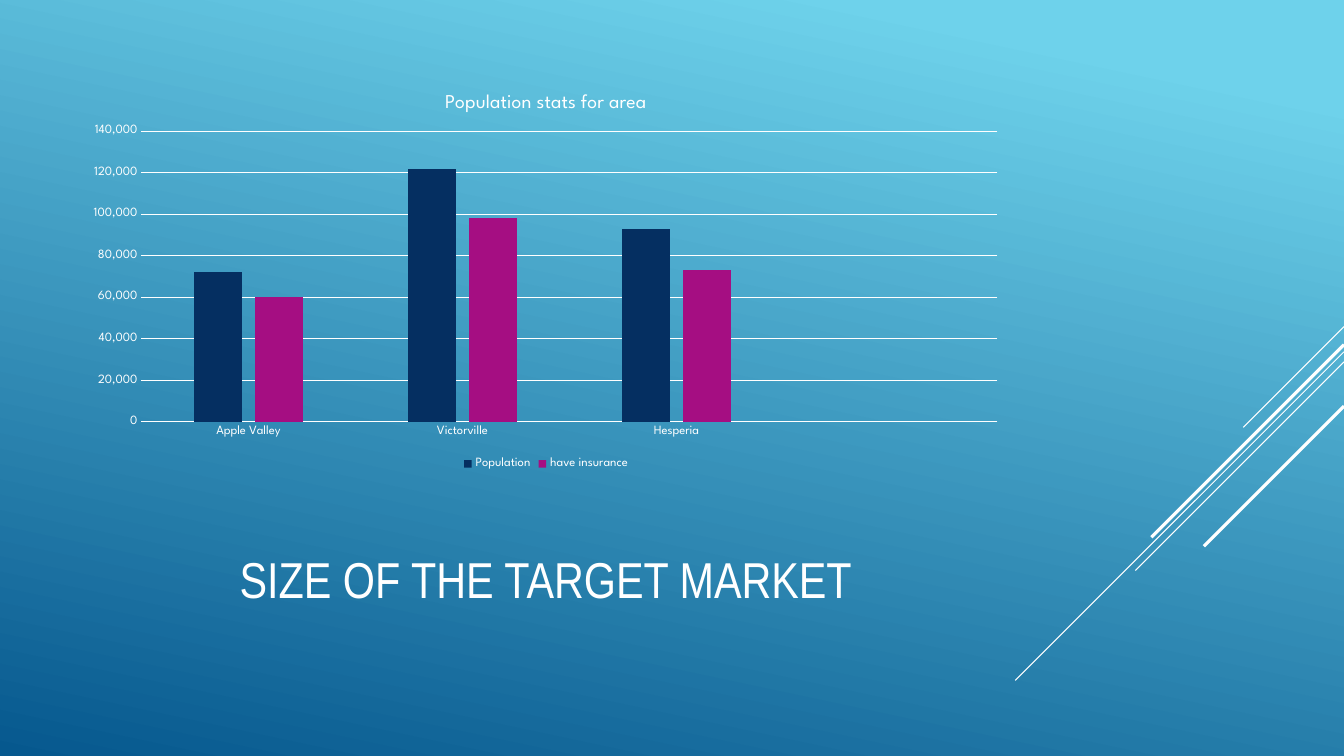
from lxml import etree
from pptx import Presentation
from pptx.chart.data import CategoryChartData
from pptx.dml.color import RGBColor
from pptx.enum.chart import XL_CHART_TYPE, XL_LEGEND_POSITION, XL_TICK_MARK
from pptx.enum.shapes import MSO_CONNECTOR
from pptx.enum.text import MSO_ANCHOR, PP_ALIGN
from pptx.oxml.ns import qn
from pptx.util import Inches, Pt

COLUMN = XL_CHART_TYPE.COLUMN_CLUSTERED
BOTTOM = XL_LEGEND_POSITION.BOTTOM
NO_TICK = XL_TICK_MARK.NONE
STRAIGHT = MSO_CONNECTOR.STRAIGHT
MIDDLE = MSO_ANCHOR.MIDDLE
CENTER = PP_ALIGN.CENTER

WIDTH, HEIGHT = 13.33, 7.5
WHITE = "FFFFFF"
BODY = "League Spartan"
HEAD = "Arial Narrow"

STREAKS = [
    (3.24, 1, 0.75),
    (3.49, 3.26, 0.75),
    (3.59, 2.07, 0.75),
    (3.42, 1.91, 2.25),
    (4.03, 1.39, 2.25),
]
TOWNS = ["Apple Valley", "Victorville", "Hesperia", ""]
SERIES = [
    ("Population", [72000, 122000, 93000, None], "052F61"),
    ("have insurance", [60000, 98000, 73000, None], "A50E82"),
]


def color(code):
    return RGBColor.from_string(code)


def style(font, size, face):
    font.size = Pt(size)
    font.name = face
    font.bold = False
    font.color.rgb = color(WHITE)


def stroke(line, width):
    line.color.rgb = color(WHITE)
    line.width = Pt(width)


def backdrop(slide):
    fill = slide.background.fill
    fill.gradient()
    fill.gradient_angle = 258
    stops = [(0.1, "6ED2EB"), (1, "06588E")]
    for stop, (place, code) in zip(fill.gradient_stops, stops):
        stop.position = place
        stop.color.rgb = color(code)


def streaks(slide, right):
    for top, reach, width in STREAKS:
        line = slide.shapes.add_connector(
            STRAIGHT, Inches(right), Inches(top),
            Inches(right - reach), Inches(top + reach))
        stroke(line.line, width)
        etree.SubElement(line._element.spPr, qn("a:effectLst"))


def heading(slide, left, top, width, height):
    box = slide.shapes.add_textbox(
        Inches(left), Inches(top), Inches(width), Inches(height))
    frame = box.text_frame
    frame.word_wrap = True
    frame.vertical_anchor = MIDDLE
    para = frame.paragraphs[0]
    para.alignment = CENTER
    run = para.add_run()
    run.text = "SIZE OF THE TARGET MARKET"
    style(run.font, 36, HEAD)


def place_plot(chart, x, y, w, h):
    plot = chart._chartSpace.chart.plotArea
    for old in plot.findall(qn("c:layout")):
        plot.remove(old)
    layout = etree.Element(qn("c:layout"))
    manual = etree.SubElement(layout, qn("c:manualLayout"))
    parts = [("layoutTarget", "inner"), ("xMode", "edge"), ("yMode", "edge"),
             ("x", x), ("y", y), ("w", w), ("h", h)]
    for name, value in parts:
        etree.SubElement(manual, qn("c:" + name)).set("val", str(value))
    plot.insert(0, layout)


def stats(slide, left, top, width, height):
    data = CategoryChartData(number_format="#,##0")
    data.categories = TOWNS
    for name, values, _ in SERIES:
        data.add_series(name, values)
    chart = slide.shapes.add_chart(
        COLUMN, Inches(left), Inches(top),
        Inches(width), Inches(height), data).chart
    style(chart.font, 10, BODY)

    chart.has_title = True
    run = chart.chart_title.text_frame.paragraphs[0].add_run()
    run.text = "Population stats for area"
    style(run.font, 14, BODY)
    chart.chart_title.include_in_layout = False

    chart.has_legend = True
    chart.legend.position = BOTTOM
    chart.legend.include_in_layout = False
    style(chart.legend.font, 9, BODY)

    for axis in (chart.category_axis, chart.value_axis):
        axis.major_tick_mark = NO_TICK
        axis.minor_tick_mark = NO_TICK
        style(axis.tick_labels.font, 9, BODY)
    stroke(chart.category_axis.format.line, 0.75)

    scale = chart.value_axis
    scale.minimum_scale = 0
    scale.maximum_scale = 140000
    scale.major_unit = 20000
    scale.format.line.fill.background()
    scale.has_major_gridlines = True
    stroke(scale.major_gridlines.format.line, 0.75)
    scale.tick_labels.number_format = "#,##0"
    scale.tick_labels.number_format_is_linked = False

    plot = chart.plots[0]
    plot.vary_by_categories = False
    plot.gap_width = 219
    plot.overlap = -27
    for bars, (_, _, code) in zip(plot.series, SERIES):
        bars.format.fill.solid()
        bars.format.fill.fore_color.rgb = color(code)
        bars.invert_if_negative = False
    place_plot(chart, 0.07, 0.14, 0.91, 0.73)


def main():
    deck = Presentation()
    deck.slide_width = Inches(WIDTH)
    deck.slide_height = Inches(HEIGHT)
    slide = deck.slides.add_slide(deck.slide_layouts[6])
    backdrop(slide)
    streaks(slide, WIDTH)
    heading(slide, 0.75, 4.91, 9.33, 1.65)
    stats(slide, 0.75, 0.75, 9.33, 3.95)
    deck.save("out.pptx")


if __name__ == "__main__":
    main()
